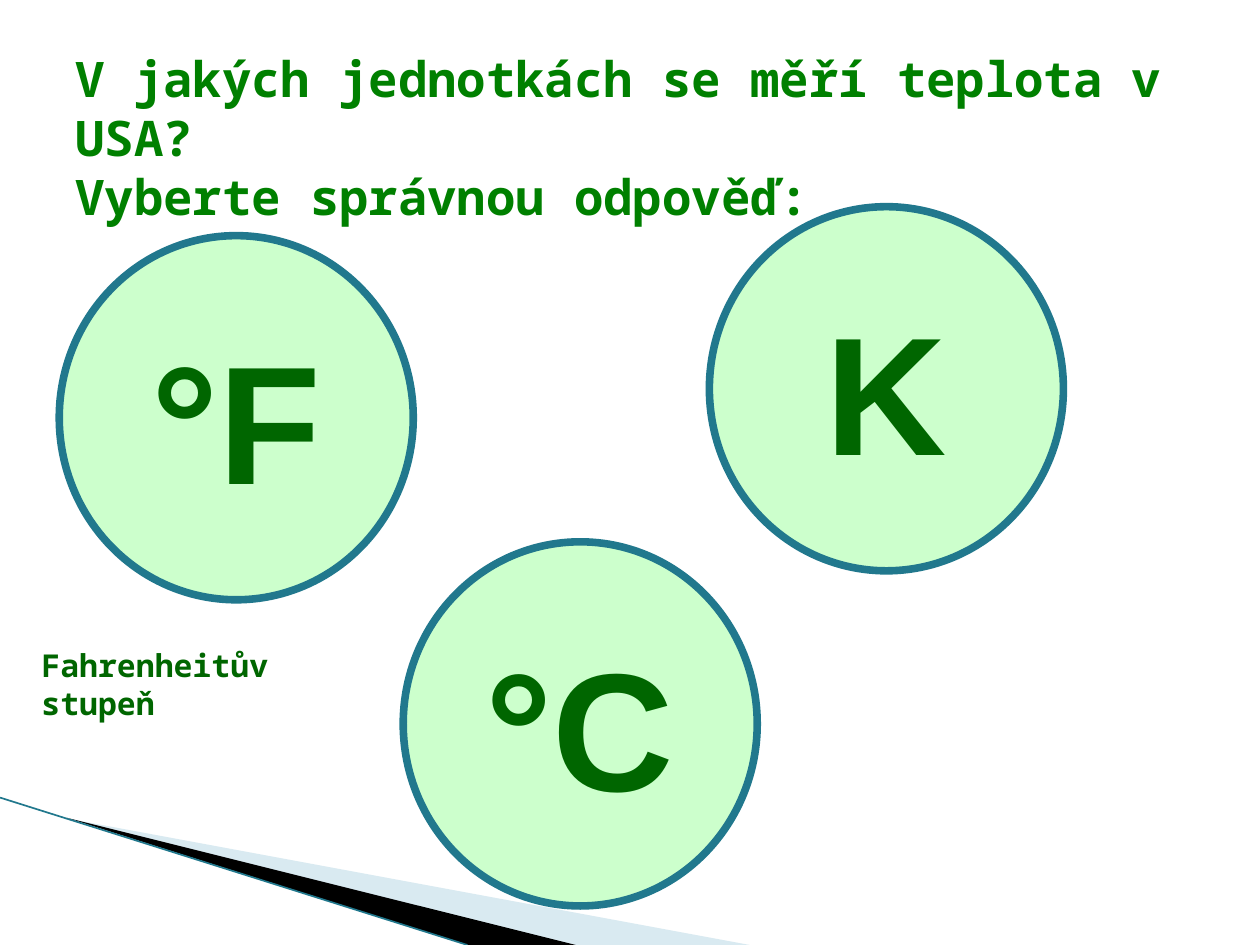
from lxml.etree import SubElement
from pptx import Presentation
from pptx.dml.color import RGBColor as RGB
from pptx.enum.shapes import MSO_CONNECTOR as LINK, MSO_SHAPE as FORM
from pptx.enum.text import MSO_ANCHOR as ANCHOR, PP_ALIGN as ALIGN
from pptx.oxml.ns import qn
from pptx.util import Inches, Pt

MONO = {"name": "Noto Sans Mono", "bold": True}
UNIT = {"name": "Arial", "bold": True, "size": Pt(96)}


def color(code):
    """Turn a hex string into a colour."""
    return RGB.from_string(code)


def write(frame, text, tint, style, align=ALIGN.LEFT, anchor=ANCHOR.TOP):
    """Put styled text into a wrapped frame."""
    frame.word_wrap = True
    frame.vertical_anchor = anchor
    para = frame.paragraphs[0]
    para.text = text
    para.alignment = align
    for run in para.runs:
        for key, value in style.items():
            setattr(run.font, key, value)
        run.font.color.rgb = color(tint)


def add_text(slide, box, text, tint, size, anchor=ANCHOR.TOP):
    """Add a text box filling the given box."""
    area = slide.shapes.add_textbox(*map(Inches, box))
    write(area.text_frame, text, tint, {**MONO, "size": Pt(size)}, anchor=anchor)


def add_wedge(slide, left, top, points, tint, alpha=100):
    """Draw a filled sliver with points relative to its corner."""
    spots = [(Inches(left + x), Inches(top + y)) for x, y in points]
    pen = slide.shapes.build_freeform(*spots[0], scale=1)
    pen.add_line_segments(spots[1:], close=True)
    wedge = pen.convert_to_shape()
    wedge.shadow.inherit = False
    wedge.fill.solid()
    wedge.fill.fore_color.rgb = color(tint)
    wedge.line.fill.background()
    if alpha < 100:
        node = wedge.fill._xPr.find(".//" + qn("a:srgbClr"))
        SubElement(node, qn("a:alpha"), val=str(alpha * 1000))


def add_corner(slide, left, top, width, height):
    """Draw the slivers and edge line of the lower left corner."""
    add_wedge(slide, left, top, [(0.55, 0.17), (5.95, height), (4.56, height)], "A0CBDC", 40)
    add_wedge(slide, left, top, [(0.53, 0.16), (4.57, height), (width, height)], "000000")
    ends = (left, top, left + width, top + height)
    edge = slide.shapes.add_connector(LINK.STRAIGHT, *map(Inches, ends))
    edge.line.color.rgb = color("21788D")
    edge.line.width = Pt(0.95)
    SubElement(edge._element.spPr, qn("a:effectLst"))


def add_unit(slide, left, top, text):
    """Draw one answer circle with its unit."""
    disc = slide.shapes.add_shape(FORM.OVAL, *map(Inches, (left, top, 2.81, 2.89)))
    disc.shadow.inherit = False
    disc.fill.solid()
    disc.fill.fore_color.rgb = color("CCFFCC")
    disc.line.color.rgb = color("21788D")
    disc.line.width = Pt(4.33)
    write(disc.text_frame, text, "006600", UNIT, ALIGN.CENTER, ANCHOR.MIDDLE)


def main():
    """Build and save the quiz slide."""
    deck = Presentation()
    deck.slide_width, deck.slide_height = Inches(10), Inches(7.5)
    slide = deck.slides.add_slide(deck.slide_layouts[6])
    add_corner(slide, 0, 6.33, 3.71, 1.17)
    title = "V jakých jednotkách se měří teplota v USA?\vVyberte správnou odpověď:"
    add_text(slide, (0.5, 0.3, 9, 1.57), title, "008000", 28, ANCHOR.MIDDLE)
    for left, top, text in [(0.47, 1.87, "°F"), (5.63, 1.64, "K"), (3.2, 4.3, "°C")]:
        add_unit(slide, left, top, text)
    add_text(slide, (0.23, 5.08, 2.81, 0.4), "Fahrenheitův stupeň", "006600", 18)
    deck.save("out.pptx")


if __name__ == "__main__":
    main()
